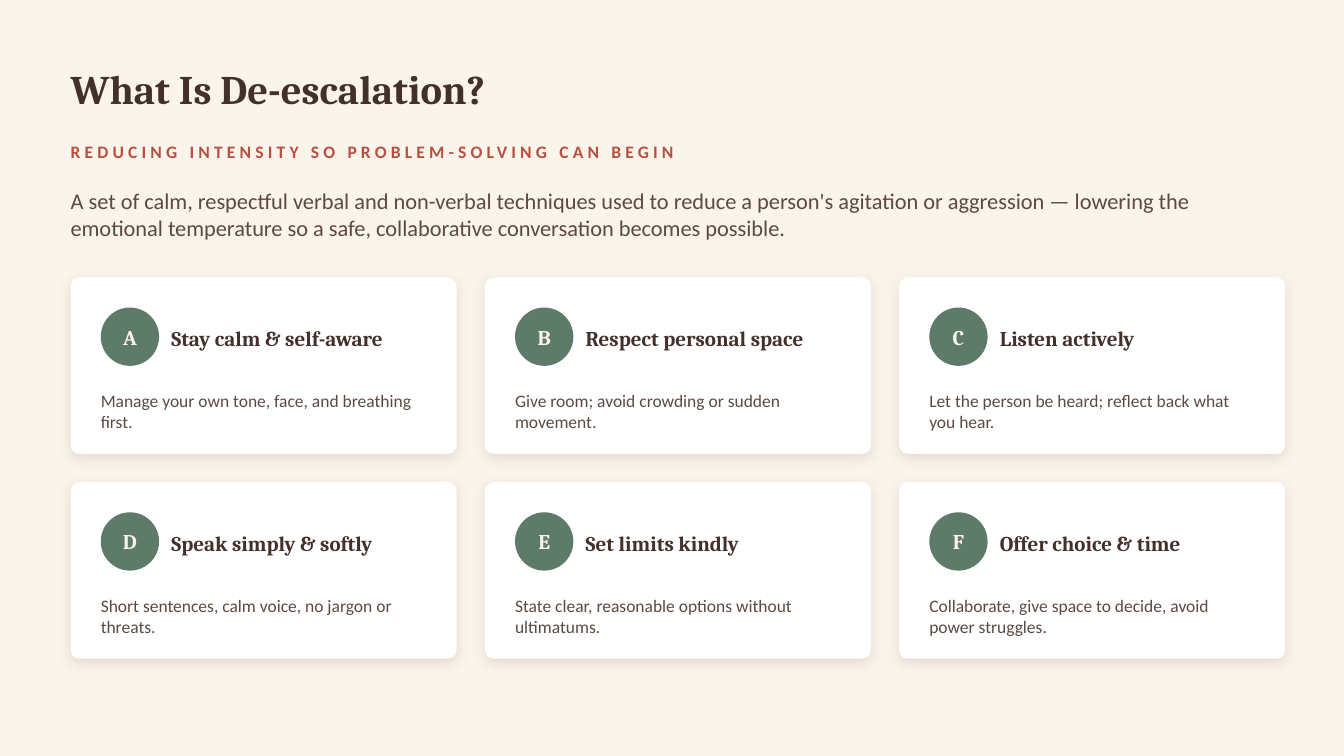
from lxml import etree
from pptx import Presentation
from pptx.dml.color import RGBColor
from pptx.enum.shapes import MSO_SHAPE
from pptx.enum.text import MSO_ANCHOR, MSO_AUTO_SIZE, PP_ALIGN
from pptx.oxml.ns import qn
from pptx.util import Cm, Pt

ROUND, OVAL = MSO_SHAPE.ROUNDED_RECTANGLE, MSO_SHAPE.OVAL
LEFT, CENTER = PP_ALIGN.LEFT, PP_ALIGN.CENTER
MIDDLE, FIXED = MSO_ANCHOR.MIDDLE, MSO_AUTO_SIZE.NONE

TITLE = "What Is De-escalation?"
TAG = "REDUCING INTENSITY SO PROBLEM-SOLVING CAN BEGIN"
INTRO = (
    "A set of calm, respectful verbal and non-verbal techniques used to reduce "
    "a person's agitation or aggression — lowering the emotional temperature "
    "so a safe, collaborative conversation becomes possible."
)
CARDS = [
    ("A", "Stay calm & self-aware", "Manage your own tone, face, and breathing first."),
    ("B", "Respect personal space", "Give room; avoid crowding or sudden movement."),
    ("C", "Listen actively", "Let the person be heard; reflect back what you hear."),
    ("D", "Speak simply & softly", "Short sentences, calm voice, no jargon or threats."),
    ("E", "Set limits kindly", "State clear, reasonable options without ultimatums."),
    ("F", "Offer choice & time", "Collaborate, give space to decide, avoid power struggles."),
]
COLORS = {
    "page": "FAF4EA", "card": "FFFFFF", "disc": "5E7A68", "shade": "9A8873",
    "head": "43302A", "tag": "B85042", "body": "5C4A41", "light": "FBF3E6",
}
HEAD, BODY = "Cambria", "Calibri"

EDGE, WIDE = 1.78, 30.23
COLS, TOP = 3, 6.99
CARD_W, CARD_H, GAP = 9.73, 4.45, 0.71
PAD, DISC = 0.76, 1.47


def color(name):
    return RGBColor.from_string(COLORS[name])


def write(shape, text, size=12.5, font=BODY, ink="body", bold=False, align=LEFT, space=0):
    frame = shape.text_frame
    frame.word_wrap = True
    frame.auto_size = FIXED
    frame.vertical_anchor = MIDDLE
    frame.margin_left = frame.margin_right = 0
    frame.margin_top = frame.margin_bottom = 0
    para = frame.paragraphs[0]
    para.alignment = align
    run = para.add_run()
    run.text = text
    run.font.size = Pt(size)
    run.font.name = font
    run.font.bold = bold
    run.font.color.rgb = color(ink)
    if space:
        run.font._element.set("spc", str(space * 100))


def label(x, y, w, h, text, **style):
    write(slide.shapes.add_textbox(Cm(x), Cm(y), Cm(w), Cm(h)), text, **style)


def block(kind, x, y, w, h, fill):
    shape = slide.shapes.add_shape(kind, Cm(x), Cm(y), Cm(w), Cm(h))
    shape.fill.solid()
    shape.fill.fore_color.rgb = color(fill)
    shape.line.fill.background()
    shape.shadow.inherit = False
    return shape


def shade(shape):
    effects = shape._element.spPr.find(qn("a:effectLst"))
    outer = etree.SubElement(
        effects, qn("a:outerShdw"), blurRad=str(Pt(9)), dist=str(Pt(3)),
        dir="5400000", algn="bl", rotWithShape="0",
    )
    tint = etree.SubElement(outer, qn("a:srgbClr"), val=COLORS["shade"])
    etree.SubElement(tint, qn("a:alpha"), val="22000")


def card(x, y, mark, head, body):
    base = block(ROUND, x, y, CARD_W, CARD_H, "card")
    base.adjustments[0] = 0.05
    shade(base)
    disc = block(OVAL, x + PAD, y + PAD, DISC, DISC, "disc")
    write(disc, mark, size=15, font=HEAD, ink="light", bold=True, align=CENTER)
    label(x + 2.54, y + 0.71, 6.68, 1.65, head, size=15, font=HEAD, ink="head", bold=True)
    label(x + PAD, y + 2.54, 8.2, 1.65, body)


deck = Presentation()
deck.slide_width, deck.slide_height = Cm(33.87), Cm(19.05)
slide = deck.slides.add_slide(deck.slide_layouts[5])
slide.background.fill.solid()
slide.background.fill.fore_color.rgb = color("page")

title = slide.shapes.title
title.left, title.top = Cm(EDGE), Cm(1.14)
title.width, title.height = Cm(WIDE), Cm(2.16)
write(title, TITLE, size=29, font=HEAD, ink="head", bold=True)
label(EDGE, 3.43, WIDE, 0.76, TAG, ink="tag", bold=True, space=3)
label(EDGE, 4.32, WIDE, 2.16, INTRO, size=16)

for i, item in enumerate(CARDS):
    row, col = divmod(i, COLS)
    card(EDGE + col * (CARD_W + GAP), TOP + row * (CARD_H + GAP), *item)

deck.save("out.pptx")
